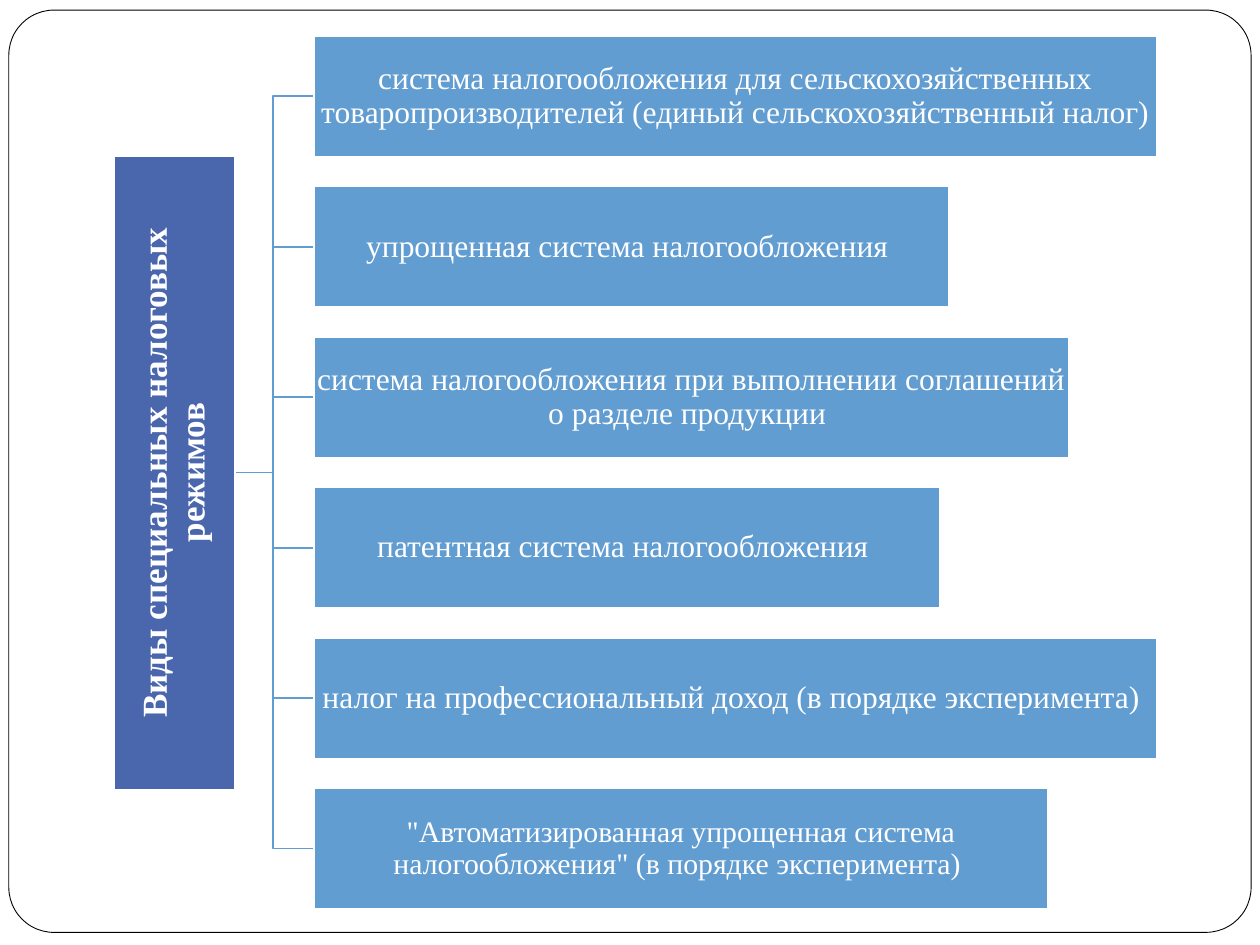
from dataclasses import dataclass

from pptx import Presentation
from pptx.dml.color import RGBColor
from pptx.enum.shapes import MSO_SHAPE
from pptx.enum.text import MSO_ANCHOR, PP_ALIGN
from pptx.util import Inches, Pt


@dataclass(frozen=True)
class Theme:
    font: str = "Times New Roman"
    white: RGBColor = RGBColor(0xFF, 0xFF, 0xFF)
    frame: RGBColor = RGBColor(0, 0, 0)
    root: RGBColor = RGBColor(0x4A, 0x66, 0xAC)
    branch: RGBColor = RGBColor(0x62, 0x9D, 0xD1)
    root_size: int = 20
    regime_size: int = 18
    small_size: int = 17


THEME = Theme()

# Tree geometry in inches
BOX_HEIGHT = 0.96
REGIME_LEFT = 2.49
FIRST_TOP = 0.285
ROW_STEP = 1.194
ROOT_LENGTH = 5.03
ROOT_CENTRE = (1.385, 3.75)
ROOT_EDGE = ROOT_CENTRE[0] + BOX_HEIGHT / 2
TRUNK_X = 2.17

ROOT_TEXT = "Виды специальных налоговых режимов"

# Text, box width, type size
REGIMES = [
    ("система налогообложения для сельскохозяйственных товаропроизводителей "
     "(единый сельскохозяйственный налог)", 6.69, THEME.regime_size),
    ("упрощенная система налогообложения ", 5.04, THEME.regime_size),
    ("система налогообложения при выполнении соглашений о разделе продукции ",
     5.99, THEME.regime_size),
    ("патентная система налогообложения ", 4.97, THEME.regime_size),
    ("налог на профессиональный доход (в порядке эксперимента) ",
     6.69, THEME.regime_size),
    ('"Автоматизированная упрощенная система налогообложения" '
     "(в порядке эксперимента) ", 5.83, THEME.small_size),
]


def apply_format(target, values):
    for name, value in values.items():
        setattr(target, name, value)


def paint(shape, fill, line, width):
    shape.shadow.inherit = False
    if fill is None:
        shape.fill.background()
    else:
        shape.fill.solid()
        shape.fill.fore_color.rgb = fill
    shape.line.color.rgb = line
    shape.line.width = Pt(width)


def add_frame(slide):
    frame = slide.shapes.add_shape(
        MSO_SHAPE.ROUNDED_RECTANGLE,
        Inches(0.07), Inches(0.08), Inches(9.86), Inches(7.32))
    frame.adjustments[0] = 0.049
    paint(frame, THEME.white, THEME.frame, 0.5)


def add_branch(slide, row_y):
    points = [(TRUNK_X, ROOT_CENTRE[1]), (TRUNK_X, row_y), (REGIME_LEFT, row_y)]
    builder = slide.shapes.build_freeform(Inches(ROOT_EDGE), Inches(ROOT_CENTRE[1]))
    builder.add_line_segments([(Inches(x), Inches(y)) for x, y in points], close=False)
    paint(builder.convert_to_shape(), None, THEME.branch, 1)


def add_box(slide, left, top, width, text, fill, size, bold=False):
    box = slide.shapes.add_shape(
        MSO_SHAPE.RECTANGLE,
        Inches(left), Inches(top), Inches(width), Inches(BOX_HEIGHT))
    paint(box, fill, THEME.white, 1)

    frame = box.text_frame
    margins = ("margin_left", "margin_top", "margin_right", "margin_bottom")
    apply_format(frame, dict.fromkeys(margins, Inches(0.01)))
    apply_format(frame, {"word_wrap": True, "vertical_anchor": MSO_ANCHOR.MIDDLE})

    paragraph = frame.paragraphs[0]
    apply_format(paragraph, {"alignment": PP_ALIGN.CENTER, "line_spacing": 0.9})
    run = paragraph.add_run()
    run.text = text
    apply_format(run.font, {"name": THEME.font, "size": Pt(size), "bold": bold})
    run.font.color.rgb = THEME.white
    return box


def main():
    deck = Presentation()
    apply_format(deck, {"slide_width": Inches(10), "slide_height": Inches(7.5)})
    # The slide has no title, so it takes the blank layout
    slide = deck.slides.add_slide(deck.slide_layouts[6])
    add_frame(slide)

    # Branches from the root to each regime
    tops = [FIRST_TOP + row * ROW_STEP for row in range(len(REGIMES))]
    for top in reversed(tops):
        add_branch(slide, top + BOX_HEIGHT / 2)

    # Root, turned to read upwards
    centre_x, centre_y = ROOT_CENTRE
    root = add_box(slide, centre_x - ROOT_LENGTH / 2, centre_y - BOX_HEIGHT / 2,
                   ROOT_LENGTH, ROOT_TEXT, THEME.root, THEME.root_size, bold=True)
    root.rotation = 270

    # Regimes
    for top, (text, width, size) in zip(tops, REGIMES):
        add_box(slide, REGIME_LEFT, top, width, text, THEME.branch, size)

    deck.save("out.pptx")


if __name__ == "__main__":
    main()
